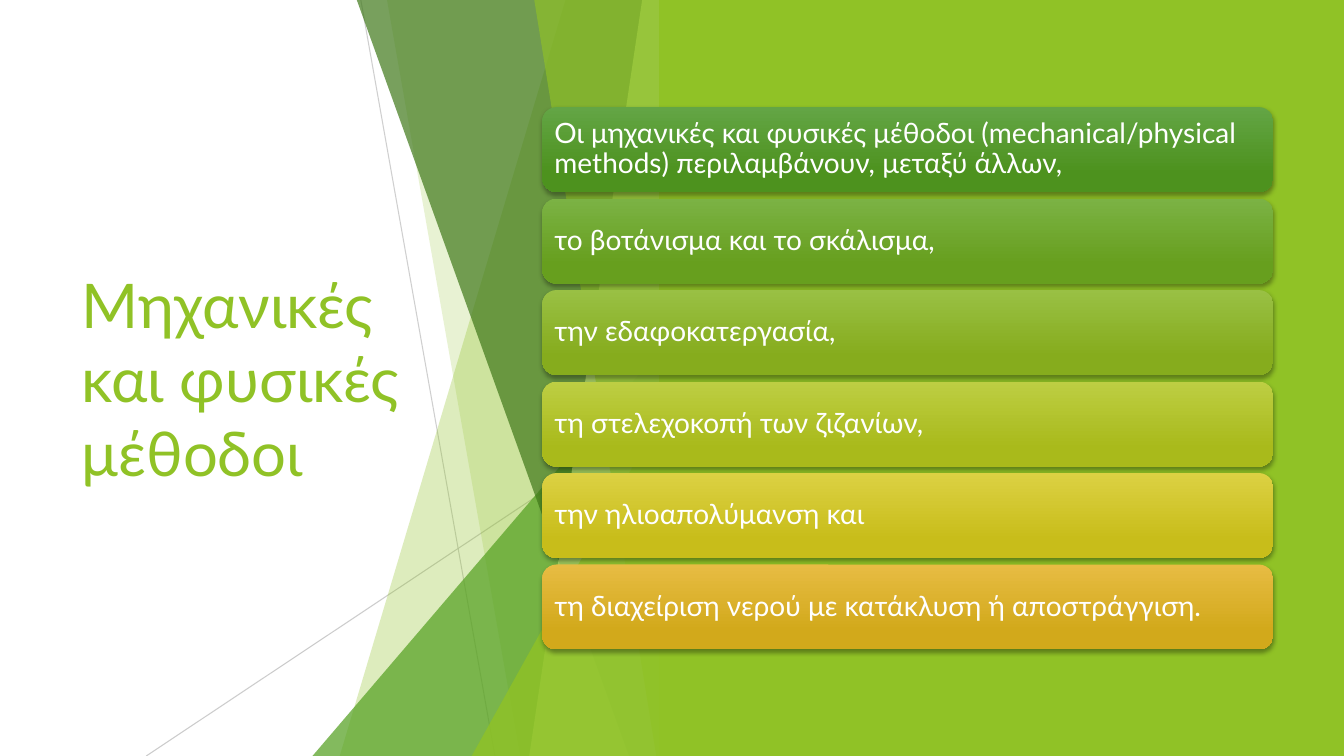
from lxml import etree
from pptx import Presentation, util as u
from pptx.dml.color import RGBColor
from pptx.enum import shapes, text
from pptx.oxml.ns import qn

COLOURS = {
    "lime": "90C226", "leaf": "54A021", "forest": "3F7819", "pale": "C0E474",
    "thread": "BFBFBF", "white": "FFFFFF", "shade": "000000",
}

deck = Presentation()
deck.slide_width, deck.slide_height = u.Inches(13.333), u.Inches(7.5)
col, row = deck.slide_width / 100, deck.slide_height / 100
slide = deck.slides.add_slide(deck.slide_layouts[5])


def box(left, top, width, height):
    return round(left * col), round(top * row), round(width * col), round(height * row)


def paint(fill, colour, opacity=100):
    fill.solid()
    fill.fore_color.rgb = RGBColor.from_string(COLOURS[colour])
    if opacity < 100:
        tint = fill._xPr.find(qn("a:solidFill"))[0]
        etree.SubElement(tint, qn("a:alpha"), val=str(opacity * 1000))


heading = slide.shapes.title
heading.left, heading.top, heading.width, heading.height = box(5.33, 20.13, 29.1, 59.73)
heading.text_frame.text = "Μηχανικές και φυσικές μέθοδοι"
heading.text_frame.word_wrap = True
heading.text_frame.auto_size = text.MSO_AUTO_SIZE.NONE
heading.text_frame.vertical_anchor = text.MSO_ANCHOR.MIDDLE
wording = heading.text_frame.paragraphs[0]
wording.alignment = text.PP_ALIGN.LEFT
wording.font.name, wording.font.size = "Lato", u.Pt(44)
wording.font.color.rgb = RGBColor.from_string(COLOURS["lime"])

threads = [(26.85, 0, 36.83, 100, 75), (50, 53.73, 10.88, 100, 80)]
for x1, y1, x2, y2, opacity in threads:
    thread = slide.shapes.add_connector(
        shapes.MSO_CONNECTOR.STRAIGHT, *box(x1, y1, x2, y2))
    thread.line.width = u.Pt(0.75)
    paint(thread.line.fill, "thread", opacity)
    etree.SubElement(thread._element.spPr, qn("a:effectLst"))

edge = 50
facets = [
    ("band", 42.08, 25.28, "lime", 30),
    ("band", 28.8, 38.7, "lime", 20),
    ("peak", 44.4, 23.25, "leaf", 72),
    ("band", 26.55, 46.8, "forest", 70),
    ("band", 47.78, 39.38, "pale", 70),
    ("band", 39.75, 48.83, "lime", 65),
    ("peak", 52.4, 35.1, "lime", 80),
]
for form, upper, foot, colour, opacity in facets:
    if form == "band":
        outline = slide.shapes.build_freeform(round(upper * col), 0)
        corners = [(edge, 0), (edge, 100), (foot, 100)]
        outline.add_line_segments([(round(x * col), round(y * row)) for x, y in corners])
        facet = outline.convert_to_shape()
    else:
        facet = slide.shapes.add_shape(
            shapes.MSO_SHAPE.ISOSCELES_TRIANGLE,
            *box(foot, upper, edge - foot, 100 - upper))
        facet.adjustments[0] = 1
    paint(facet.fill, colour, opacity)
    facet.line.fill.background()
    facet.shadow.inherit = False

panel = slide.shapes.add_shape(shapes.MSO_SHAPE.RECTANGLE, *box(49.05, 0, 50.95, 100))
paint(panel.fill, "lime")
panel.line.fill.background()
panel.shadow.inherit = False

methods = [
    ("Οι μηχανικές και φυσικές μέθοδοι (mechanical/physical methods) "
     "περιλαμβάνουν, μεταξύ άλλων,", "63A545", "4D921E"),
    ("το βοτάνισμα και το σκάλισμα,", "7BB244", "679F1E"),
    ("την εδαφοκατεργασία,", "99C044", "86AC1D"),
    ("τη στελεχοκοπή των ζιζανίων,", "BDCE43", "A9BA1B"),
    ("την ηλιοαπολύμανση και", "DCD143", "C8BD1A"),
    ("τη διαχείριση νερού με κατάκλυση ή αποστράγγιση.", "E7BC43", "D2A91B"),
]
for i, (method, light, dark) in enumerate(methods):
    card = slide.shapes.add_shape(
        shapes.MSO_SHAPE.ROUNDED_RECTANGLE, *box(40.35, 14.17 + i * 12.1, 54.38, 11.24))
    card.fill.gradient()
    card.fill.gradient_angle = 270
    for stop, share, shade in zip(card.fill.gradient_stops, (0, 0.78), (light, dark)):
        stop.position = share
        stop.color.rgb = RGBColor.from_string(shade)
    card.line.fill.background()
    card.shadow.inherit = False
    shadow = etree.SubElement(
        card._element.spPr.find(qn("a:effectLst")), qn("a:outerShdw"),
        blurRad=str(u.Pt(3)), dist=str(u.Pt(2)), dir="5400000", rotWithShape="0")
    black = etree.SubElement(shadow, qn("a:srgbClr"), val=COLOURS["shade"])
    etree.SubElement(black, qn("a:alpha"), val="35000")

    frame = card.text_frame
    frame.text = method
    frame.word_wrap = True
    frame.vertical_anchor = text.MSO_ANCHOR.MIDDLE
    frame.margin_left = frame.margin_right = u.Inches(0.08)
    frame.margin_top = frame.margin_bottom = u.Inches(0.08)
    wording = frame.paragraphs[0]
    wording.alignment = text.PP_ALIGN.LEFT
    wording.line_spacing = 0.9
    wording.font.name, wording.font.size = "Lato", u.Pt(20)
    wording.font.color.rgb = RGBColor.from_string(COLOURS["white"])

deck.save("out.pptx")
